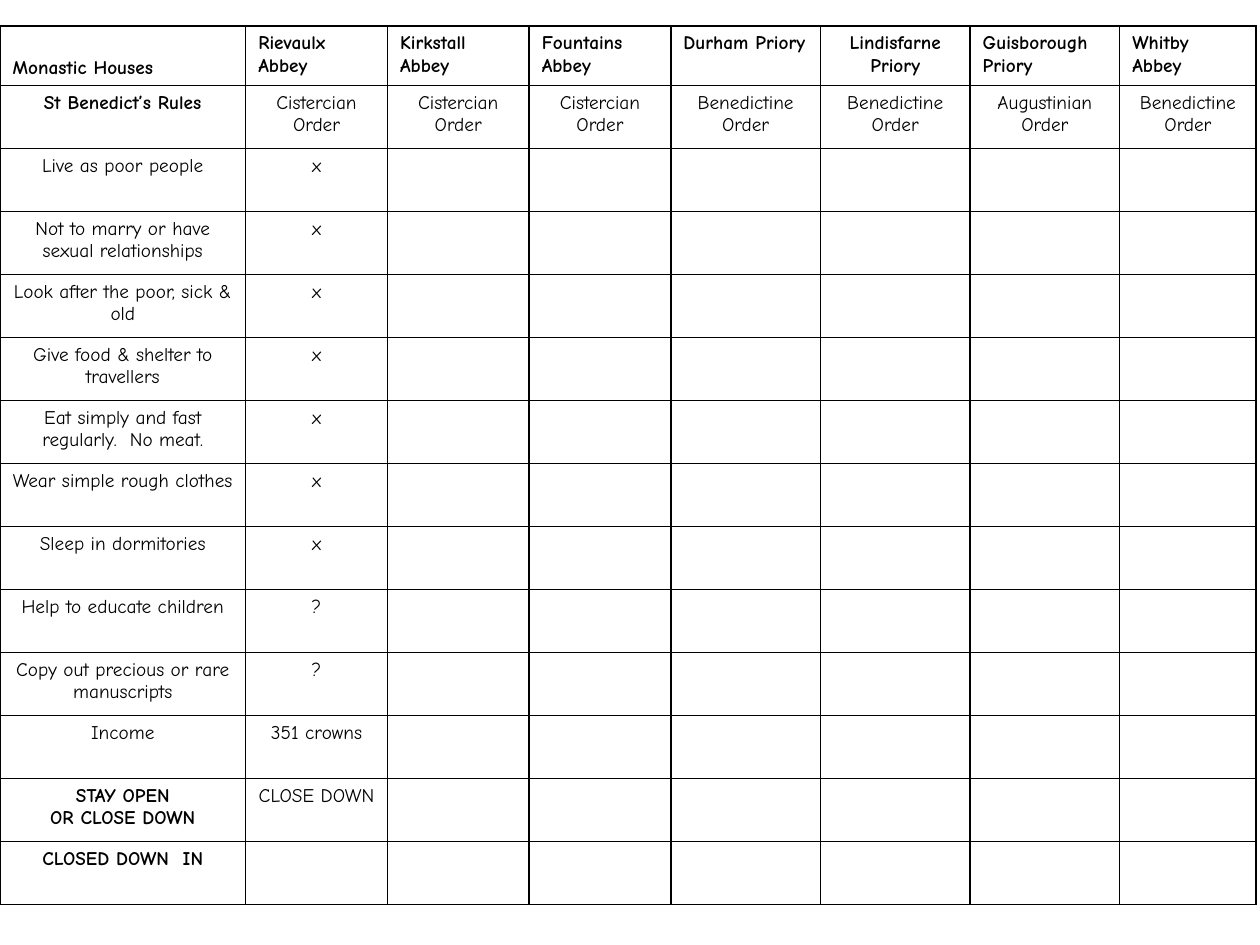
"""Build a table slide that checks monastic houses against St Benedict's Rules."""
from lxml.etree import SubElement
from pptx import Presentation
from pptx.dml.color import RGBColor
from pptx.enum.text import MSO_ANCHOR as ANCHOR, PP_ALIGN as ALIGN
from pptx.oxml.ns import qn
from pptx.util import Pt

COLOURS = {"ink": "000000", "paper": "FFFFFF"}
FONT = "Comic Neue"
COLUMN_WIDTHS = [140.4] + [81] * 3 + [85.5] * 3 + [78]
HEADER_HEIGHT, RULE_HEIGHT = 33.8, 36

HOUSES = [
    ("Rievaulx Abbey", "Cistercian"),
    ("Kirkstall Abbey", "Cistercian"),
    ("Fountains Abbey", "Cistercian"),
    ("Durham Priory", "Benedictine"),
    ("Lindisfarne Priory", "Benedictine"),
    ("Guisborough Priory", "Augustinian"),
    ("Whitby Abbey", "Benedictine"),
]
RULES = [
    ("Live as poor people", "x"),
    ("Not to marry or have sexual relationships", "x"),
    ("Look after the poor, sick & old", "x"),
    ("Give food & shelter to travellers", "x"),
    ("Eat simply and fast regularly.  No meat.", "x"),
    ("Wear simple rough clothes", "x"),
    ("Sleep in dormitories", "x"),
    ("Help to educate children", "?"),
    ("Copy out precious or rare manuscripts", "?"),
    ("Income", "351 crowns"),
]
VERDICTS = [("STAY OPEN\nOR CLOSE DOWN", "CLOSE DOWN"), ("CLOSED DOWN  IN", "")]


def write(cell, text, bold=False, align=ALIGN.CENTER, anchor=ANCHOR.TOP):
    cell.vertical_anchor = anchor
    cell.text_frame.text = text
    for line in cell.text_frame.paragraphs:
        line.alignment = align
        line.font.size = Pt(11)
        for run in line.runs:
            run.font.name = FONT
            run.font.size = Pt(11)
            run.font.bold = bold
            run.font.color.rgb = RGBColor.from_string(COLOURS["ink"])


def style_cell(cell):
    properties = cell._tc.get_or_add_tcPr()
    for side in ("lnL", "lnR", "lnT", "lnB"):
        border = SubElement(properties, qn(f"a:{side}"), w=str(Pt(1)))
        ink = SubElement(border, qn("a:solidFill"))
        SubElement(ink, qn("a:srgbClr"), val=COLOURS["ink"])
    cell.fill.solid()
    cell.fill.fore_color.rgb = RGBColor.from_string(COLOURS["paper"])


def add_grid(slide, row_heights):
    frame = slide.shapes.add_table(
        len(row_heights), len(COLUMN_WIDTHS), Pt(0), Pt(15),
        Pt(sum(COLUMN_WIDTHS)), Pt(sum(row_heights)))
    grid = frame.table
    grid.first_row = grid.horz_banding = False
    for column, width in zip(grid.columns, COLUMN_WIDTHS):
        column.width = Pt(width)
    for row, height in zip(grid.rows, row_heights):
        row.height = Pt(height)
    for cell in grid.iter_cells():
        style_cell(cell)
    return grid


def fill_houses(grid):
    write(grid.cell(0, 0), "Monastic Houses", bold=True, align=ALIGN.LEFT, anchor=ANCHOR.BOTTOM)
    write(grid.cell(1, 0), "St Benedict’s Rules", bold=True)
    for column, (house, order) in enumerate(HOUSES, start=1):
        align = ALIGN.CENTER if house == "Lindisfarne Priory" else ALIGN.LEFT
        write(grid.cell(0, column), house, bold=True, align=align)
        write(grid.cell(1, column), f"{order} Order")


def fill_findings(grid, findings, first_row, bold=False):
    for row, (rule, finding) in enumerate(findings, start=first_row):
        write(grid.cell(row, 0), rule, bold=bold)
        if finding:
            write(grid.cell(row, 1), finding)


def main():
    deck = Presentation()
    deck.slide_width, deck.slide_height = Pt(720), Pt(540)
    slide = deck.slides.add_slide(deck.slide_layouts[6])
    row_heights = [HEADER_HEIGHT] + [RULE_HEIGHT] * (1 + len(RULES) + len(VERDICTS))
    grid = add_grid(slide, row_heights)
    fill_houses(grid)
    fill_findings(grid, RULES, first_row=2)
    fill_findings(grid, VERDICTS, first_row=2 + len(RULES), bold=True)
    deck.save("out.pptx")


if __name__ == "__main__":
    main()
